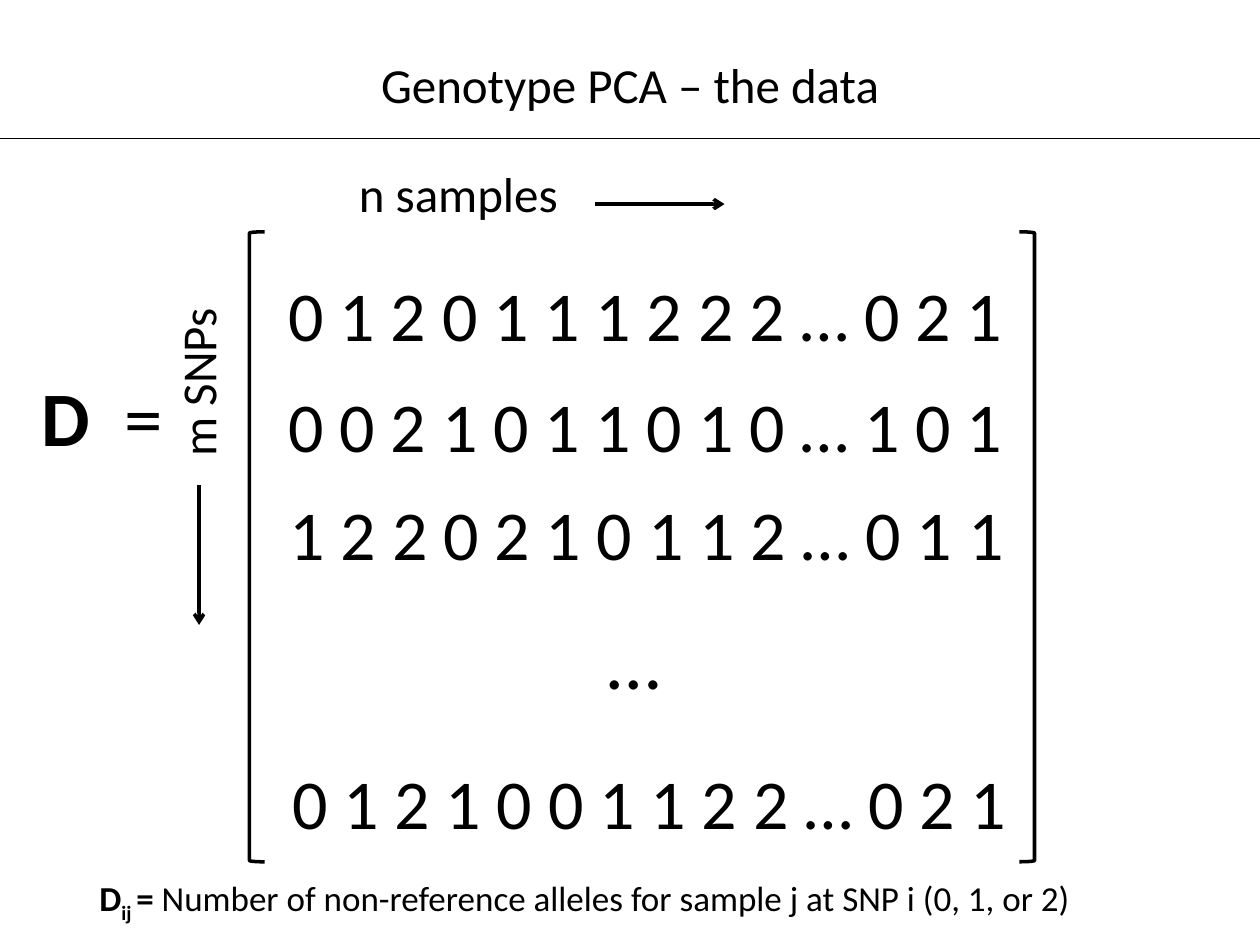
from lxml import etree
from pptx import Presentation
from pptx.dml.color import RGBColor
from pptx.enum.shapes import MSO_CONNECTOR, MSO_SHAPE
from pptx.enum.text import MSO_ANCHOR, PP_ALIGN
from pptx.oxml.ns import qn
from pptx.util import Inches, Pt

LINE = MSO_CONNECTOR.STRAIGHT
LEFT, RIGHT = MSO_SHAPE.LEFT_BRACKET, MSO_SHAPE.RIGHT_BRACKET
TOP, CENTER = MSO_ANCHOR.TOP, PP_ALIGN.CENTER
INK = "000000"

TITLE = "Genotype PCA – the data"
ROWS = [
    (2.19, 2.11, "0 1 2 0 1 1 1 2 2 2 … 0 2 1"),
    (2.19, 2.99, "0 0 2 1 0 1 1 0 1 0 … 1 0 1"),
    (2.2, 3.84, "1 2 2 0 2 1 0 1 1 2 … 0 1 1"),
    (2.22, 5.98, "0 1 2 1 0 0 1 1 2 2 … 0 2 1"),
]
LABELS = [
    ((0.23, 2.88, 1.32, 0.84), 44, [("D ", True, 0), (" =", False, 0)], 0),
    ((4.72, 4.81, 0.63, 0.84), 44, [("…", False, 0)], 0),
    ((2.75, 1.25, 1.8, 0.57), 28, [("n samples", False, 0)], 0),
    ((0.84, 2.71, 1.45, 0.57), 28, [("m SNPs", False, 0)], 270),
    ((0.69, 6.91, 8.23, 0.44), 20, [
        ("D", True, 0),
        ("ij ", True, -25),
        ("= ", True, 0),
        ("Number of non-reference alleles for sample j at SNP i (0, 1, or 2)", False, 0),
    ], 0),
]
BRACKETS = [(LEFT, 1.98), (RIGHT, 8.09)]
LINES = [
    ((0, 1.1, 10, 1.1), 0.75, False),
    ((4.72, 1.62, 5.75, 1.62), 2, True),
    ((1.58, 3.85, 1.58, 4.96), 2, True),
]


def color(target, code=INK):
    target.rgb = RGBColor.from_string(code)


def style(para, size):
    para.font.name = "Calibri"
    para.font.size = Pt(size)
    color(para.font.color)


def stroke(item, width):
    color(item.line.color)
    item.line.width = Pt(width)


def label(slide, box, size, runs, turn=0):
    shape = slide.shapes.add_textbox(*map(Inches, box))
    shape.rotation = turn
    shape.text_frame.word_wrap = False
    para = shape.text_frame.paragraphs[0]
    style(para, size)
    for text, bold, base in runs:
        run = para.add_run()
        run.text = text
        run.font.bold = bold
        if base:
            run._r.get_or_add_rPr().set("baseline", str(base * 1000))


def rule(slide, ends, width, arrow):
    item = slide.shapes.add_connector(LINE, *map(Inches, ends))
    stroke(item, width)
    if arrow:
        etree.SubElement(item.line._get_or_add_ln(), qn("a:tailEnd"), type="arrow")
    etree.SubElement(item._element.spPr, qn("a:effectLst"))


def main():
    deck = Presentation()
    deck.slide_width, deck.slide_height = Inches(10), Inches(7.5)
    slide = deck.slides.add_slide(deck.slide_layouts[5])

    title = slide.shapes.title
    title.left, title.top, title.width, title.height = map(Inches, (0, 0.38, 10, 0.57))
    title.text_frame.text = TITLE
    title.text_frame.vertical_anchor = TOP
    head = title.text_frame.paragraphs[0]
    head.alignment = CENTER
    style(head, 28)

    for kind, left in BRACKETS:
        shape = slide.shapes.add_shape(kind, *map(Inches, (left, 1.84, 0.12, 5)))
        shape.shadow.inherit = False
        shape.fill.background()
        stroke(shape, 2)
    for left, top, text in ROWS:
        label(slide, (left, top, 5.93, 0.77), 40, [(text, False, 0)])
    for box, size, runs, turn in LABELS:
        label(slide, box, size, runs, turn)
    for ends, width, arrow in LINES:
        rule(slide, ends, width, arrow)

    deck.save("out.pptx")


if __name__ == "__main__":
    main()
